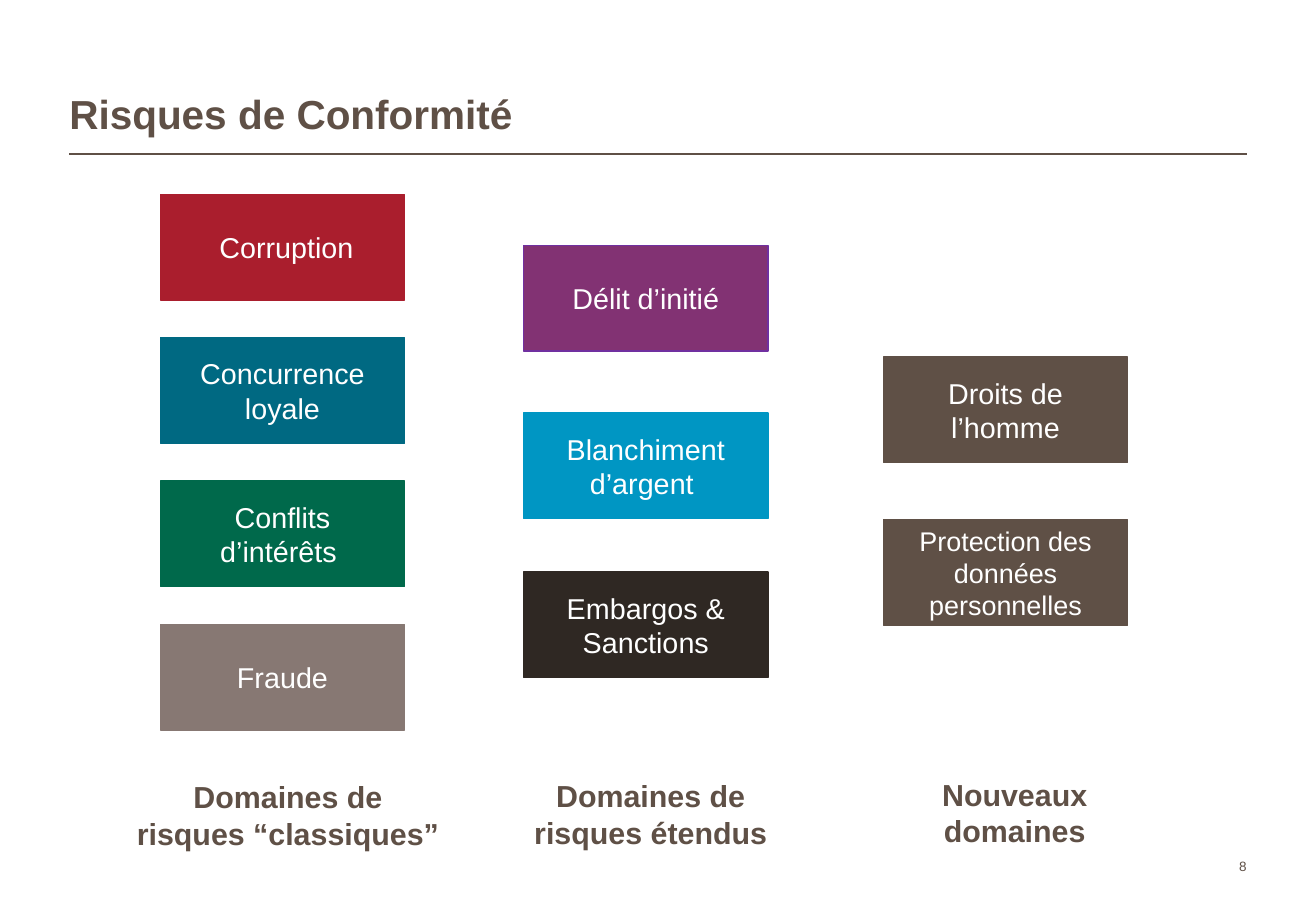
from dataclasses import dataclass

from lxml import etree
from pptx import Presentation
from pptx import util as u
from pptx.dml import color
from pptx.enum import shapes, text
from pptx.oxml import ns
from pptx.slide import Slide
from pptx.text import text as txt

FONT = "Arial"
BROWN = "5F5046"
WHITE = "FFFFFF"
RISK_WIDTH, RISK_HEIGHT = 2.01, 0.87
CLASSIC_TOP, CLASSIC_STEP = 1.6, 1.18


@dataclass(frozen=True)
class Risk:
    label: str
    top: float
    fill: str
    border: str = ""
    size: int = 17


@dataclass(frozen=True)
class Domain:
    left: float
    risks: list[Risk]
    caption: str
    caption_box: tuple[float, float, float, float]


CLASSIC_RISKS = [
    (" Corruption", "AA1E2D"),
    ("Concurrence loyale", "006982"),
    ("Conflits d’intérêts ", "00694B"),
    ("Fraude", "877873"),
]

DOMAINS = [
    Domain(
        1.32,
        [Risk(label, CLASSIC_TOP + row * CLASSIC_STEP, fill)
         for row, (label, fill) in enumerate(CLASSIC_RISKS)],
        "Domaines de risques “classiques”",
        (1.02, 6.36, 2.7, 0.71),
    ),
    Domain(
        4.31,
        [
            Risk("Délit d’initié", 2.02, "823273", border="7030A0"),
            Risk("Blanchiment d’argent ", 3.4, "0096C3"),
            Risk("Embargos & Sanctions", 4.71, "2F2823"),
        ],
        "Domaines de risques étendus ",
        (4.29, 6.35, 2.13, 0.73),
    ),
    Domain(
        7.27,
        [
            Risk("Droits de l’homme", 2.94, BROWN),
            Risk("Protection des données personnelles", 4.28, BROWN, size=16),
        ],
        "Nouveaux domaines",
        (7.49, 6.34, 1.72, 0.72),
    ),
]


def rgb(value: str) -> color.RGBColor:
    return color.RGBColor.from_string(value)


def write(frame: txt.TextFrame, content: str, size: int, ink: str,
          align: text.PP_ALIGN, anchor: text.MSO_ANCHOR,
          bold: bool = False, inset: tuple[float, float] = (0.1, 0.05)) -> None:
    frame.word_wrap = True
    frame.vertical_anchor = anchor
    frame.margin_left = frame.margin_right = u.Inches(inset[0])
    frame.margin_top = frame.margin_bottom = u.Inches(inset[1])
    paragraph = frame.paragraphs[0]
    paragraph.text = content
    paragraph.alignment = align
    paragraph.font.name = FONT
    paragraph.font.size = u.Pt(size)
    paragraph.font.bold = bold
    paragraph.font.color.rgb = rgb(ink)


def add_text(slide: Slide, box: tuple[float, float, float, float]) -> txt.TextFrame:
    return slide.shapes.add_textbox(*map(u.Inches, box)).text_frame


def add_risk(slide: Slide, left: float, risk: Risk) -> None:
    box = (left, risk.top, RISK_WIDTH, RISK_HEIGHT)
    block = slide.shapes.add_shape(shapes.MSO_SHAPE.RECTANGLE, *map(u.Inches, box))
    block.shadow.inherit = False
    block.fill.solid()
    block.fill.fore_color.rgb = rgb(risk.fill)
    block.line.color.rgb = rgb(risk.border or risk.fill)
    block.line.width = u.Pt(0.75)
    write(block.text_frame, risk.label, risk.size, WHITE,
          text.PP_ALIGN.CENTER, text.MSO_ANCHOR.MIDDLE)


def add_domain(slide: Slide, domain: Domain) -> None:
    for risk in domain.risks:
        add_risk(slide, domain.left, risk)
    write(add_text(slide, domain.caption_box), domain.caption, 18, BROWN,
          text.PP_ALIGN.CENTER, text.MSO_ANCHOR.TOP, bold=True)


def add_title(slide: Slide) -> None:
    rule = slide.shapes.add_connector(
        shapes.MSO_CONNECTOR.STRAIGHT, *map(u.Inches, (0.57, 1.27, 10.26, 1.27)))
    rule.line.color.rgb = rgb(BROWN)
    rule.line.width = u.Pt(1)
    etree.SubElement(rule._element.spPr, ns.qn("a:effectLst"))
    title = add_text(slide, (0.57, 0.21, 9.69, 0.93))
    write(title, "Risques de Conformité", 24, BROWN, text.PP_ALIGN.LEFT,
          text.MSO_ANCHOR.BOTTOM, bold=True, inset=(0, 0))
    title.paragraphs[0].line_spacing = 0.95


def main() -> None:
    deck = Presentation()
    deck.slide_width, deck.slide_height = u.Inches(10.83), u.Inches(7.5)
    slide = deck.slides.add_slide(deck.slide_layouts[6])
    add_title(slide)
    for domain in DOMAINS:
        add_domain(slide, domain)
    write(add_text(slide, (9.79, 7.02, 0.47, 0.18)), "8", 8, BROWN,
          text.PP_ALIGN.RIGHT, text.MSO_ANCHOR.BOTTOM, inset=(0, 0))
    deck.save("out.pptx")


if __name__ == "__main__":
    main()
